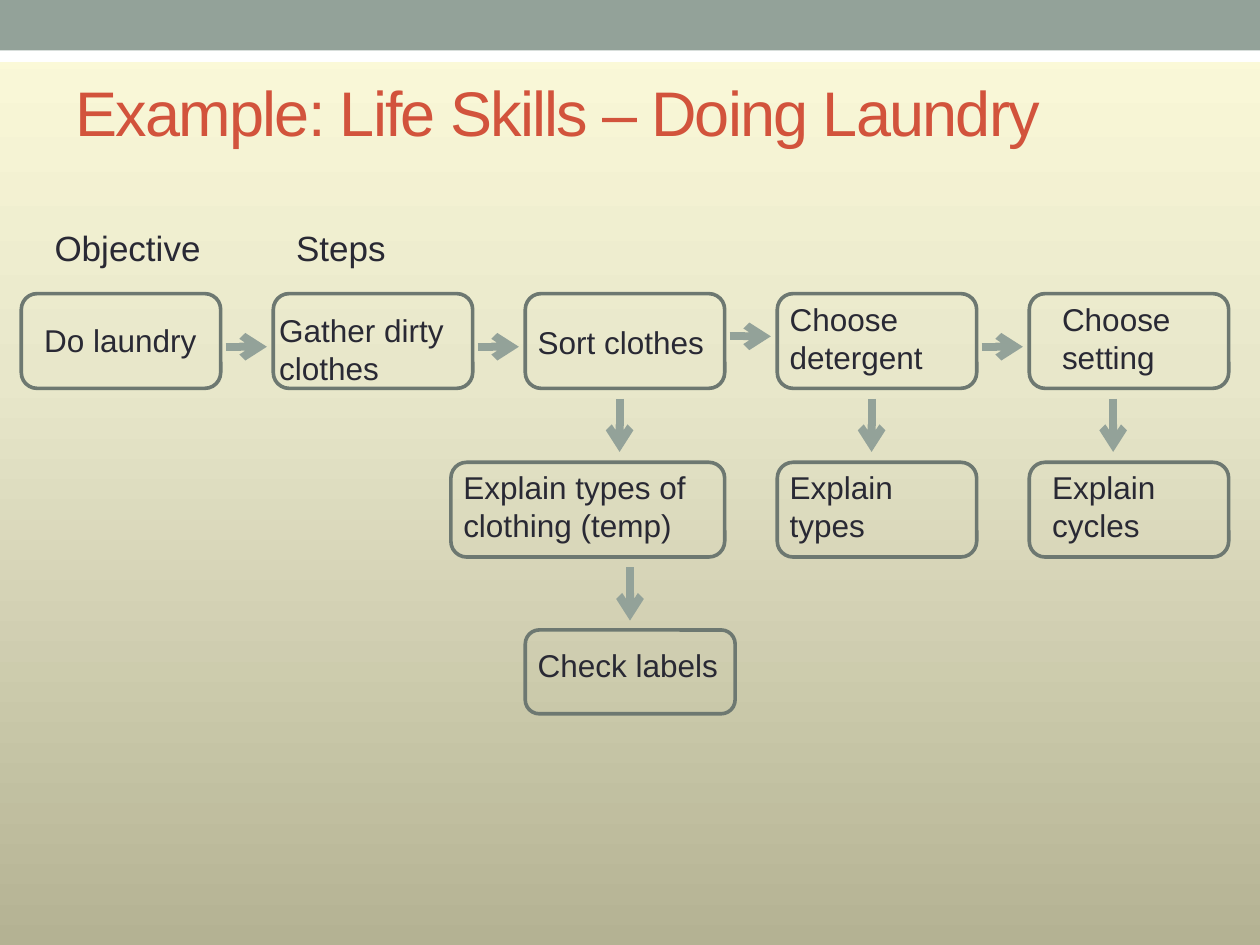
"""Build the laundry task-analysis flowchart slide."""
from copy import deepcopy

from lxml import etree
from pptx import Presentation
from pptx.dml.color import RGBColor
from pptx.enum.shapes import MSO_CONNECTOR, MSO_SHAPE
from pptx.enum.text import MSO_ANCHOR
from pptx.oxml.ns import qn
from pptx.util import Cm, Pt

RECTANGLE = MSO_SHAPE.RECTANGLE
ROUNDED = MSO_SHAPE.ROUNDED_RECTANGLE
STRAIGHT = MSO_CONNECTOR.STRAIGHT
MIDDLE, TOP = MSO_ANCHOR.MIDDLE, MSO_ANCHOR.TOP

TITLE = "Example: Life Skills – Doing Laundry"
HEADINGS = [("Objective", 0.85, 3.81), ("Steps", 5.72, 4.02)]
BACKGROUND = [(0, "FDFBDA"), (0.4, "E8E7CA"), (1, "B4B293")]
BANDS = [(0.61, 0.64, "FFFFFF"), (0, 1.02, "93A299")]

COLUMNS = [0.43 + 5.08 * index for index in range(5)]
ROWS = [5.92, 9.32, 12.7]
BOX_WIDTH, BOX_HEIGHT = 4.02, 1.91

# Each entry: text, column, row, box (shift, width, height), label (shift x, shift y, width)
STANDARD = (0, BOX_WIDTH, BOX_HEIGHT)
NODES = [
    ("Do laundry", 0, 0, STANDARD, (0.21, 0.43, 3.61)),
    ("Gather dirty clothes", 1, 0, STANDARD, (-0.13, 0.23, 4.11)),
    ("Sort clothes", 2, 0, STANDARD, (0, 0.46, 4.11)),
    ("Choose detergent", 3, 0, STANDARD, (0, 0, 4.02)),
    ("Choose setting", 4, 0, STANDARD, (0.41, 0, 3.18)),
    ("Explain types of clothing (temp)", 2, 1, (-1.5, 5.52, BOX_HEIGHT), (-1.5, 0, 5.52)),
    ("Explain types", 3, 1, STANDARD, (0, 0, 4.11)),
    ("Explain cycles", 4, 1, STANDARD, (0.21, 0, 3.39)),
    ("Check labels", 2, 2, (0, 4.23, 1.69), (0, 0.2, 4.23)),
]
ACROSS_Y = [6.99, 6.99, 6.78, 6.99]
DOWN = [(12.49, 0), (17.57, 0), (22.44, 0), (12.7, 1)]

BODY = {"size": Pt(18), "name": "Arial", "color": "292934"}
HEADING = {**BODY, "size": Pt(20)}
TITLE_FORMAT = {**BODY, "size": Pt(36), "color": "D2533C"}


def rgb(value):
    """Turn a hex string into a colour."""
    return RGBColor.from_string(value)


def set_background(slide):
    """Fill the slide with the vertical gradient."""
    fill = slide.background.fill
    fill.gradient()
    fill.gradient_angle = 270
    stops = slide.background._cSld.find(".//" + qn("a:gsLst"))
    stops.append(deepcopy(stops[0]))
    for stop, (position, color) in zip(fill.gradient_stops, BACKGROUND):
        stop.position = position
        stop.color.rgb = rgb(color)


def add_shape(slide, kind, box, fill=None, line=None):
    """Add a shape with an optional fill and outline."""
    shape = slide.shapes.add_shape(kind, *map(Cm, box))
    shape.shadow.inherit = False
    if fill:
        shape.fill.solid()
        shape.fill.fore_color.rgb = rgb(fill)
    else:
        shape.fill.background()
    if line:
        shape.line.color.rgb = rgb(line)
        shape.line.width = Pt(2.08)
    else:
        shape.line.fill.background()


def add_text(slide, text, box, font_format, anchor=TOP):
    """Add a wrapping text box and return its run."""
    frame = slide.shapes.add_textbox(*map(Cm, box)).text_frame
    frame.word_wrap = True
    frame.vertical_anchor = anchor
    run = frame.paragraphs[0].add_run()
    run.text = text
    for name, value in font_format.items():
        if name == "color":
            run.font.color.rgb = rgb(value)
        else:
            setattr(run.font, name, value)
    return run


def add_arrow(slide, *ends):
    """Add a thick connector with an arrowhead at its end."""
    connector = slide.shapes.add_connector(STRAIGHT, *map(Cm, ends))
    connector.line.color.rgb = rgb("93A299")
    connector.line.width = Pt(4.5)
    etree.SubElement(connector.line._get_or_add_ln(), qn("a:tailEnd"), type="arrow")
    etree.SubElement(connector._element.spPr, qn("a:effectLst"))


def main():
    """Assemble and save the slide."""
    presentation = Presentation()
    presentation.slide_width, presentation.slide_height = Cm(25.4), Cm(19.05)
    slide = presentation.slides.add_slide(presentation.slide_layouts[6])
    set_background(slide)
    for top, height, color in BANDS:
        add_shape(slide, RECTANGLE, (0, top, 25.4, height), fill=color)
    title = add_text(slide, TITLE, (1.27, 1.27, 20.12, 1.96), TITLE_FORMAT, MIDDLE)
    title.font._element.set("spc", "-100")
    for text, left, width in HEADINGS:
        add_text(slide, text, (left, 4.45, width, 1.11), HEADING)
    for text, column, row, (shift, width, height), (label_x, label_y, label_width) in NODES:
        left, top = COLUMNS[column], ROWS[row]
        add_shape(slide, ROUNDED, (left + shift, top, width, height), line="6D7871")
        label_height = 1.02 if label_y > 0.4 or row == 2 else 1.8
        add_text(slide, text, (left + label_x, top + label_y, label_width, label_height), BODY)
    for left, y in zip(COLUMNS, ACROSS_Y):
        add_arrow(slide, left + 4.12, y, left + 4.95, y)
    for x, row in DOWN:
        start = ROWS[row] + BOX_HEIGHT + 0.21
        add_arrow(slide, x, start, x, start + 1.07)
    presentation.save("out.pptx")


if __name__ == "__main__":
    main()
